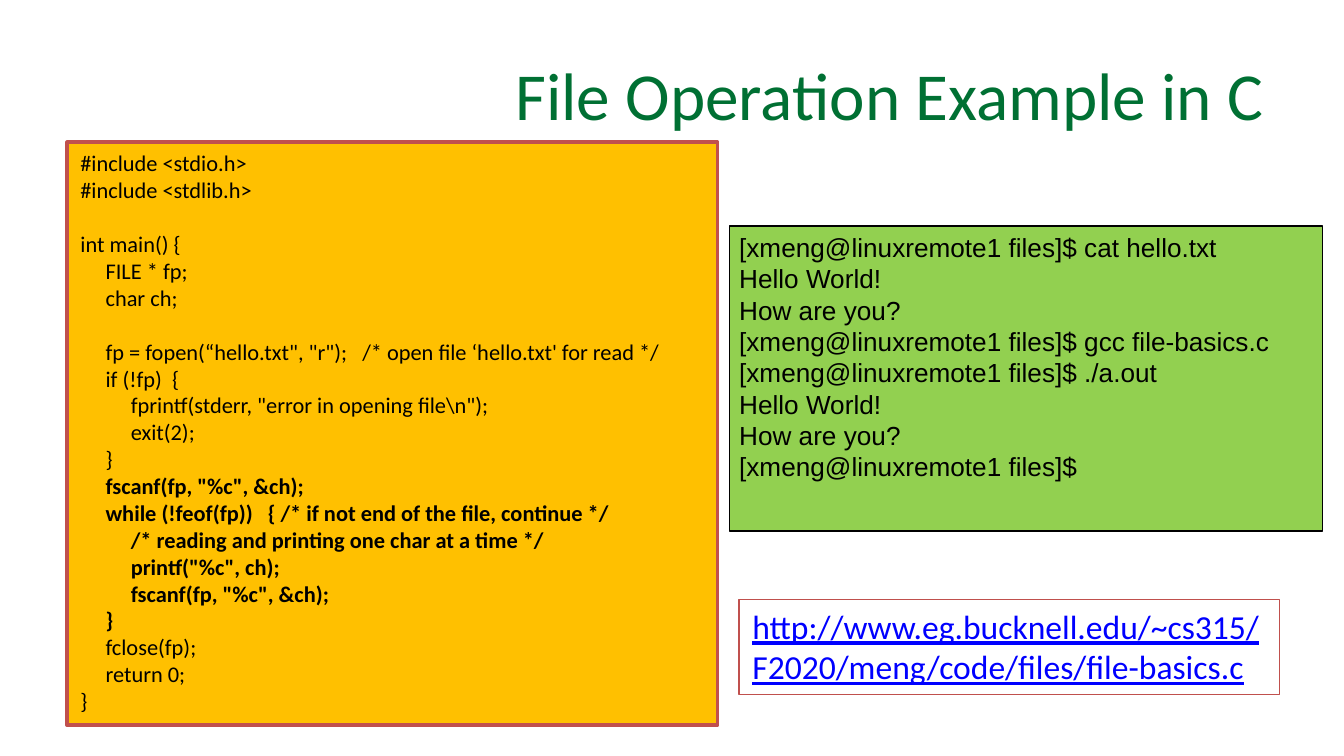
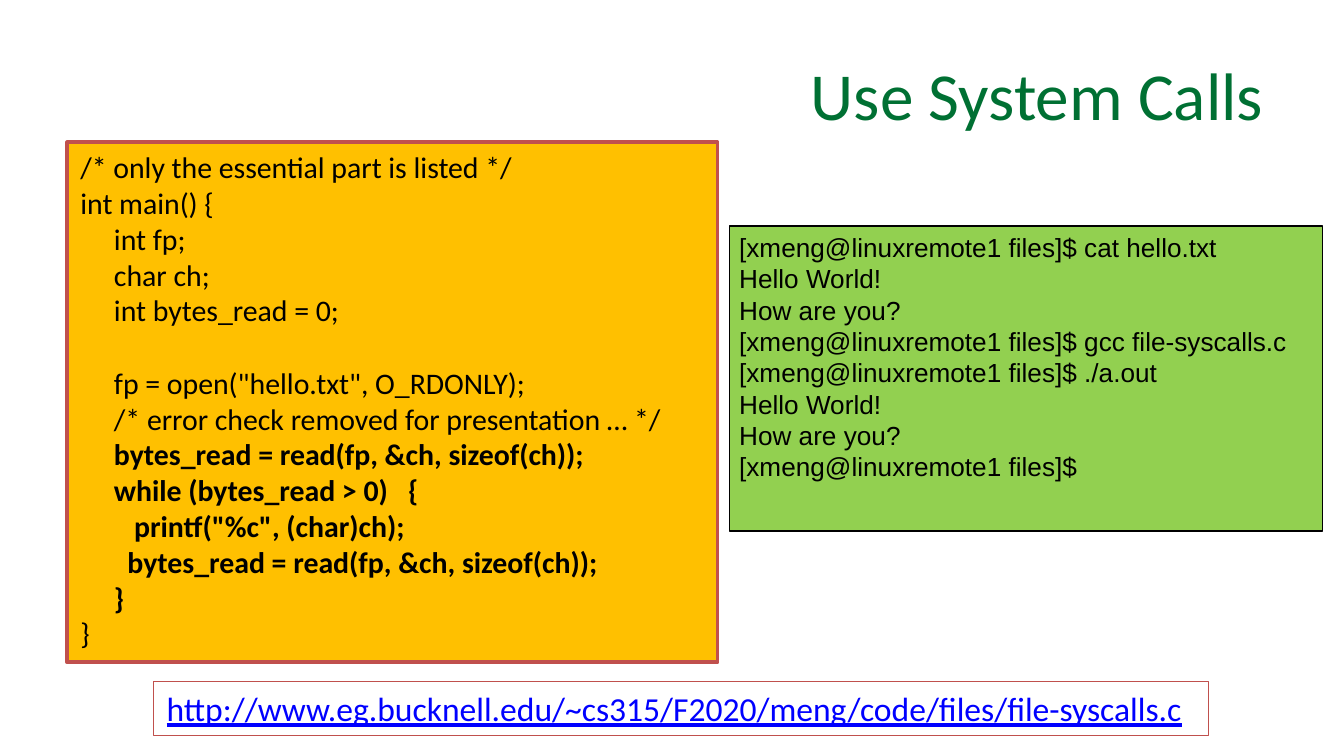
from pptx import Presentation
from pptx.dml.color import RGBColor
from pptx.enum.shapes import MSO_SHAPE as SHAPE
from pptx.enum.text import MSO_ANCHOR as ANCHOR, PP_ALIGN as ALIGN
from pptx.util import Cm, Pt

BLACK, GREEN, BLUE = "000000", "007033", "0000FF"
ORANGE, LIME, RED = "FFC000", "92D050", "C0504D"
LINE_HEIGHT = 1.22

TITLE_BOX = (1.27, 0.58, 22.86, 2.39)
TERMINAL_BOX = (13.79, 4.27, 11.2, 5.77)

BASICS_CODE = r"""#include <stdio.h>
#include <stdlib.h>

int main() {
     FILE * fp;
     char ch;

     fp = fopen(“hello.txt", "r");   /* open file ‘hello.txt' for read */
     if (!fp)  {
          fprintf(stderr, "error in opening file\n");
          exit(2);
     }
     fscanf(fp, "%c", &ch);
     while (!feof(fp))   { /* if not end of the file, continue */
          /* reading and printing one char at a time */
          printf("%c", ch);
          fscanf(fp, "%c", &ch);
     }
     fclose(fp);
     return 0;
}"""

SYSCALLS_CODE = r"""/* only the essential part is listed */
int main() {
     int fp;
     char ch;
     int bytes_read = 0;

     fp = open("hello.txt", O_RDONLY);
     /* error check removed for presentation … */
     bytes_read = read(fp, &ch, sizeof(ch));
     while (bytes_read > 0)   {
        printf("%c", (char)ch);
       bytes_read = read(fp, &ch, sizeof(ch));
     }
}"""

SESSION = """[xmeng@linuxremote1 files]$ cat hello.txt
Hello World!
How are you?
[xmeng@linuxremote1 files]$ gcc {source}
[xmeng@linuxremote1 files]$ ./a.out
Hello World!
How are you?
[xmeng@linuxremote1 files]$"""


def rgb(value):
    return RGBColor.from_string(value)


def write(tf, text, size, color=BLACK, font="Calibri", align=ALIGN.LEFT):
    tf.word_wrap = True
    p, gap = tf.paragraphs[0], 0
    for number, line in enumerate(text.split("\n")):
        if not line:
            gap += size * LINE_HEIGHT
            continue
        if number:
            p = tf.add_paragraph()
        p.text = line
        p.alignment = align
        p.space_before, gap = Pt(gap), 0
        p.font.name, p.font.size = font, Pt(size)
        p.font.color.rgb = rgb(color)


def add_panel(s, box, line, weight=0.75, fill=None):
    sp = s.shapes.add_shape(SHAPE.RECTANGLE, *map(Cm, box))
    sp.shadow.inherit = False
    if fill:
        sp.fill.solid()
        sp.fill.fore_color.rgb = rgb(fill)
    else:
        sp.fill.background()
    sp.line.color.rgb = rgb(line)
    sp.line.width = Pt(weight)
    sp.text_frame.vertical_anchor = ANCHOR.TOP
    return sp.text_frame


def add_title(s, box, text):
    tf = s.shapes.add_textbox(*map(Cm, box)).text_frame
    tf.vertical_anchor = ANCHOR.MIDDLE
    write(tf, text, 36, GREEN, align=ALIGN.RIGHT)


def add_code(s, box, code, size, bold_lines):
    tf = add_panel(s, box, RED, 2, ORANGE)
    write(tf, code, size)
    for p in tf.paragraphs[bold_lines]:
        p.font.bold = True


def add_terminal(s, box, source):
    tf = add_panel(s, box, BLACK, fill=LIME)
    tf.margin_left = tf.margin_right = Cm(0.18)
    tf.margin_top = tf.margin_bottom = Cm(0.1)
    write(tf, SESSION.format(source=source), 14, font="Arial")


def add_address(s, box, address):
    tf = add_panel(s, box, RED)
    write(tf, address, 18, BLUE)
    for p in tf.paragraphs:
        p.font.underline = True


def add_example(prs, title, code, size, bold_lines, code_height, source,
                address, address_box):
    s = prs.slides.add_slide(prs.slide_layouts[6])
    add_title(s, TITLE_BOX, title)
    add_code(s, (1.27, 2.69, 12.29, code_height), code, size, bold_lines)
    add_terminal(s, TERMINAL_BOX, source)
    add_address(s, address_box, address)


def main():
    prs = Presentation()
    prs.slide_width, prs.slide_height = Cm(25.4), Cm(14.29)
    add_example(
        prs, "File Operation Example in C", BASICS_CODE, 12, slice(10, 16),
        11.02, "file-basics.c",
        "http://www.eg.bucknell.edu/~cs315/\n"
        "F2020/meng/code/files/file-basics.c",
        (13.97, 11.33, 10.21, 1.8))
    add_example(
        prs, "Use System Calls", SYSCALLS_CODE, 16, slice(7, 12),
        9.83, "file-syscalls.c",
        "http://www.eg.bucknell.edu/~cs315/F2020/meng/code/files/"
        "file-syscalls.c",
        (2.9, 12.88, 19.94, 1.02))
    prs.save("out.pptx")


if __name__ == "__main__":
    main()
